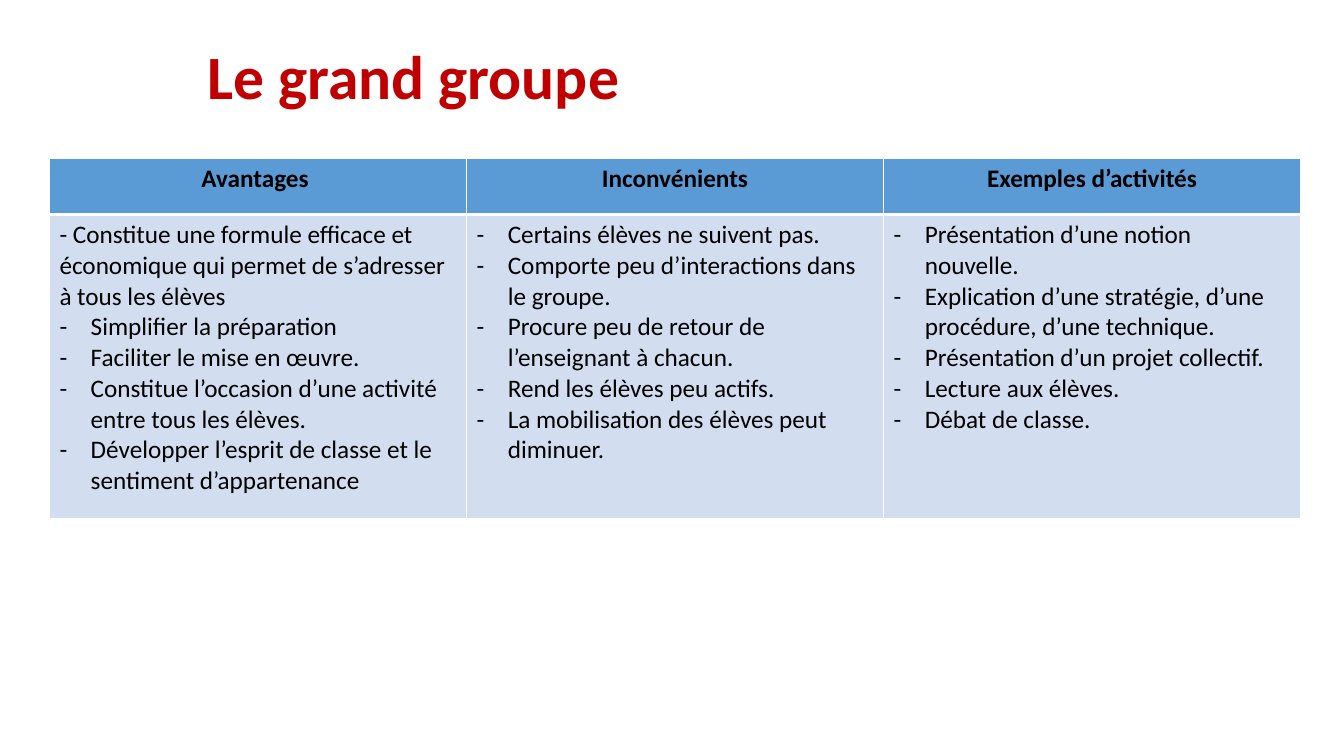
from dataclasses import dataclass

from lxml import etree
from pptx import Presentation
from pptx import util as u
from pptx.dml.color import RGBColor
from pptx.enum import text
from pptx.oxml import ns


@dataclass(frozen=True)
class Theme:
    face: str = "Calibri"
    title: str = "C00000"
    ink: str = "000000"
    head: str = "5B9BD5"
    body: str = "D2DEEF"
    rule: str = "FFFFFF"
    large: int = 44
    small: int = 18
    thin: int = 1
    thick: int = 3
    dent: float = 0.31


class Deck:
    def __init__(self, theme, wide, high):
        self.theme = theme
        self.prs = Presentation()
        self.prs.slide_width = u.Inches(wide)
        self.prs.slide_height = u.Inches(high)
        self.slide = self.prs.slides.add_slide(self.prs.slide_layouts[6])

    def place(self, x, y, w, h):
        wide, high = self.prs.slide_width, self.prs.slide_height
        return [round(n) for n in (x * wide, y * high, w * wide, h * high)]

    def put(self, item, style):
        for key, value in style.items():
            setattr(item, key, value)

    def label(self, para, words, size, color, bold=False, **style):
        run = para.add_run()
        run.text = words
        self.put(para, style)
        self.put(run.font, {"name": self.theme.face, "size": u.Pt(size), "bold": bold})
        run.font.color.rgb = RGBColor.from_string(color)

    def title(self, words, *share):
        frame = self.slide.shapes.add_textbox(*self.place(*share)).text_frame
        self.put(frame, {"word_wrap": True, "vertical_anchor": text.MSO_ANCHOR.MIDDLE})
        self.label(frame.paragraphs[0], words, self.theme.large, self.theme.title,
                   bold=True, line_spacing=0.9)

    def bullet(self, para):
        dent = u.Inches(self.theme.dent)
        props = para._p.get_or_add_pPr()
        props.set("marL", str(dent))
        props.set("indent", str(-dent))
        etree.SubElement(props, ns.qn("a:buFont"), typeface=self.theme.face)
        etree.SubElement(props, ns.qn("a:buChar"), char="-")

    def border(self, cell, **sides):
        props = cell._tc.get_or_add_tcPr()
        for side in "LRTB":
            width = u.Pt(sides.get(side, self.theme.thin))
            line = etree.SubElement(props, ns.qn("a:ln" + side), w=str(width))
            fill = etree.SubElement(line, ns.qn("a:solidFill"))
            etree.SubElement(fill, ns.qn("a:srgbClr"), val=self.theme.rule)

    def paint(self, cell, color):
        cell.fill.solid()
        cell.fill.fore_color.rgb = RGBColor.from_string(color)

    def table(self, cols, split, *share):
        look = self.theme
        frame = self.slide.shapes.add_table(2, len(cols), *self.place(*share))
        grid = frame.table
        for row, part in zip(grid.rows, (split, 1 - split)):
            row.height = round(frame.height * part)
        for i, (name, lines) in enumerate(cols.items()):
            top, low = grid.cell(0, i), grid.cell(1, i)
            self.border(top, B=look.thick)
            self.border(low, T=look.thick)
            self.paint(top, look.head)
            self.paint(low, look.body)
            self.label(top.text_frame.paragraphs[0], name, look.small, look.ink,
                       bold=True, alignment=text.PP_ALIGN.CENTER)
            body = low.text_frame
            for n, words in enumerate(lines):
                para = body.add_paragraph() if n else body.paragraphs[0]
                self.label(para, words, look.small, look.ink)
                if not words.startswith("- "):
                    self.bullet(para)


COLS = {
    "Avantages ": [
        "- Constitue une formule efficace et économique qui permet de s’adresser à tous les élèves",
        "Simplifier la préparation",
        "Faciliter le mise en œuvre.",
        "Constitue l’occasion d’une activité entre tous les élèves.",
        "Développer l’esprit de classe et le sentiment d’appartenance",
    ],
    "Inconvénients": [
        "Certains élèves ne suivent pas.",
        "Comporte peu d’interactions dans le groupe.",
        "Procure peu de retour de l’enseignant à chacun.",
        "Rend les élèves peu actifs.",
        "La mobilisation des élèves peut diminuer.",
    ],
    "Exemples d’activités": [
        "Présentation d’une notion nouvelle.",
        "Explication d’une stratégie, d’une procédure, d’une technique.",
        "Présentation d’un projet collectif.",
        "Lecture aux élèves.",
        "Débat de classe.",
    ],
}


def main():
    wide, high = 13.33, 7.5
    deck = Deck(Theme(), wide, high)
    deck.title("Le grand groupe", 1.96 / wide, 0.34 / high, 9.58 / wide, 0.9 / high)
    deck.table(COLS, 0.1, 0.49 / wide, 1.57 / high, 12.41 / wide, 5.59 / high)
    deck.prs.save("out.pptx")


if __name__ == "__main__":
    main()
